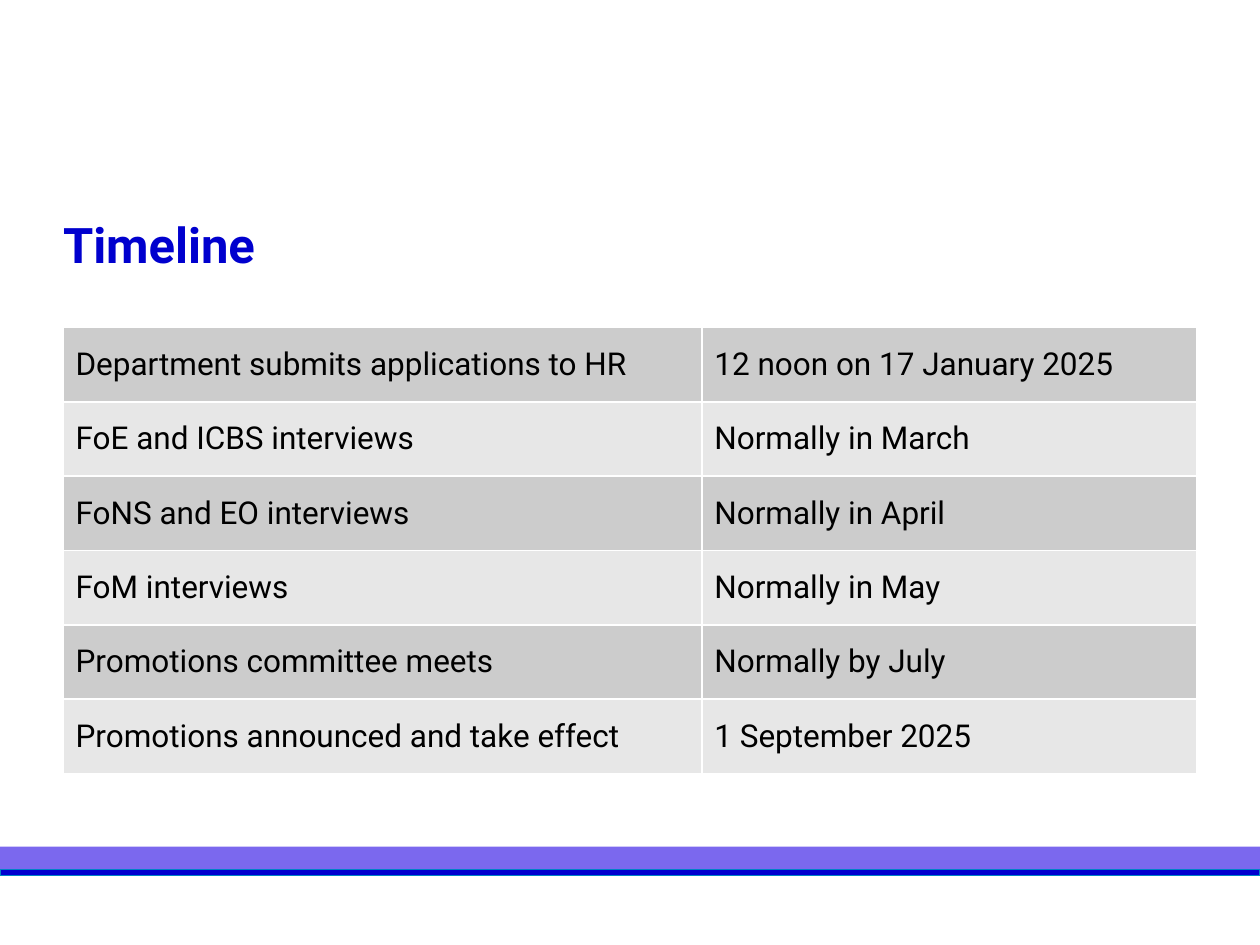
import pptx
import pptx.util
import pptx.dml.color
import pptx.enum.shapes
import pptx.enum.text
import pptx.oxml
import pptx.oxml.ns
from pptx.util import Inches

TITLE = "Timeline"
ROWS = [
    ("Department submits applications to HR", "12 noon on 17 January 2025"),
    ("FoE and ICBS interviews", "Normally in March"),
    ("FoNS and EO interviews", "Normally in April"),
    ("FoM interviews", "Normally in May"),
    ("Promotions committee meets", "Normally by July"),
    ("Promotions announced and take effect", "1 September 2025"),
]
COLUMN_WIDTHS = (5.07, 3.93)
ROW_HEIGHT = 0.59
BANDS = [
    (6.72, 0.18, "violet", None),
    (6.9, 0.05, "blue", "edge"),
]
FONT = "Roboto"
COLOURS = {
    "violet": "7B68EE",
    "blue": "0000CE",
    "edge": "0082C6",
    "text": "000000",
    "dark_row": "CCCCCC",
    "light_row": "E7E7E7",
    "border": "FFFFFF",
}


def rgb(name):
    return pptx.dml.color.RGBColor.from_string(COLOURS[name])


def fill_with(fill, name):
    fill.solid()
    fill.fore_color.rgb = rgb(name)


def add_text(tf, text, size, colour, bold=False):
    tf.vertical_anchor = pptx.enum.text.MSO_ANCHOR.MIDDLE
    p = tf.paragraphs[0]
    p.alignment = pptx.enum.text.PP_ALIGN.LEFT
    r = p.add_run()
    r.text = text
    r.font.name = FONT
    r.font.size = pptx.util.Pt(size)
    r.font.bold = bold
    r.font.color.rgb = rgb(colour)


def add_borders(cell):
    tc_pr = cell._tc.get_or_add_tcPr()
    for i, side in enumerate(("lnL", "lnR", "lnT", "lnB")):
        tc_pr.insert(i, pptx.oxml.parse_xml(
            f'<a:{side} {pptx.oxml.ns.nsdecls("a")} w="{pptx.util.Pt(1)}"><a:solidFill>'
            f'<a:srgbClr val="{COLOURS["border"]}"/></a:solidFill></a:{side}>'))


prs = pptx.Presentation()
prs.slide_width, prs.slide_height = Inches(10), Inches(7.5)
s = prs.slides.add_slide(prs.slide_layouts[5])

for top, height, fill, line in BANDS:
    sp = s.shapes.add_shape(pptx.enum.shapes.MSO_SHAPE.RECTANGLE,
                            0, Inches(top), prs.slide_width, Inches(height))
    sp.shadow.inherit = False
    fill_with(sp.fill, fill)
    if line:
        fill_with(sp.line.fill, line)
        sp.line.width = pptx.util.Pt(0.75)
    else:
        sp.line.fill.background()

title = s.shapes.title
title.left, title.top = Inches(0.5), Inches(1.63)
title.width, title.height = Inches(9), Inches(0.56)
tf = title.text_frame
tf.auto_size = pptx.enum.text.MSO_AUTO_SIZE.NONE
tf.margin_left = tf.margin_right = tf.margin_bottom = 0
tf.margin_top = Inches(0.05)
add_text(tf, TITLE, 28, "blue", bold=True)

table = s.shapes.add_table(
    len(ROWS), len(COLUMN_WIDTHS), Inches(0.5), Inches(2.6),
    Inches(sum(COLUMN_WIDTHS)), Inches(ROW_HEIGHT * len(ROWS))).table
table.first_row = False
for column, width in zip(table.columns, COLUMN_WIDTHS):
    column.width = Inches(width)
for i, texts in enumerate(ROWS):
    table.rows[i].height = Inches(ROW_HEIGHT)
    for j, text in enumerate(texts):
        cell = table.cell(i, j)
        fill_with(cell.fill, "light_row" if i % 2 else "dark_row")
        add_borders(cell)
        add_text(cell.text_frame, text, 18, "text")
        cell.vertical_anchor = pptx.enum.text.MSO_ANCHOR.MIDDLE

prs.save("out.pptx")
